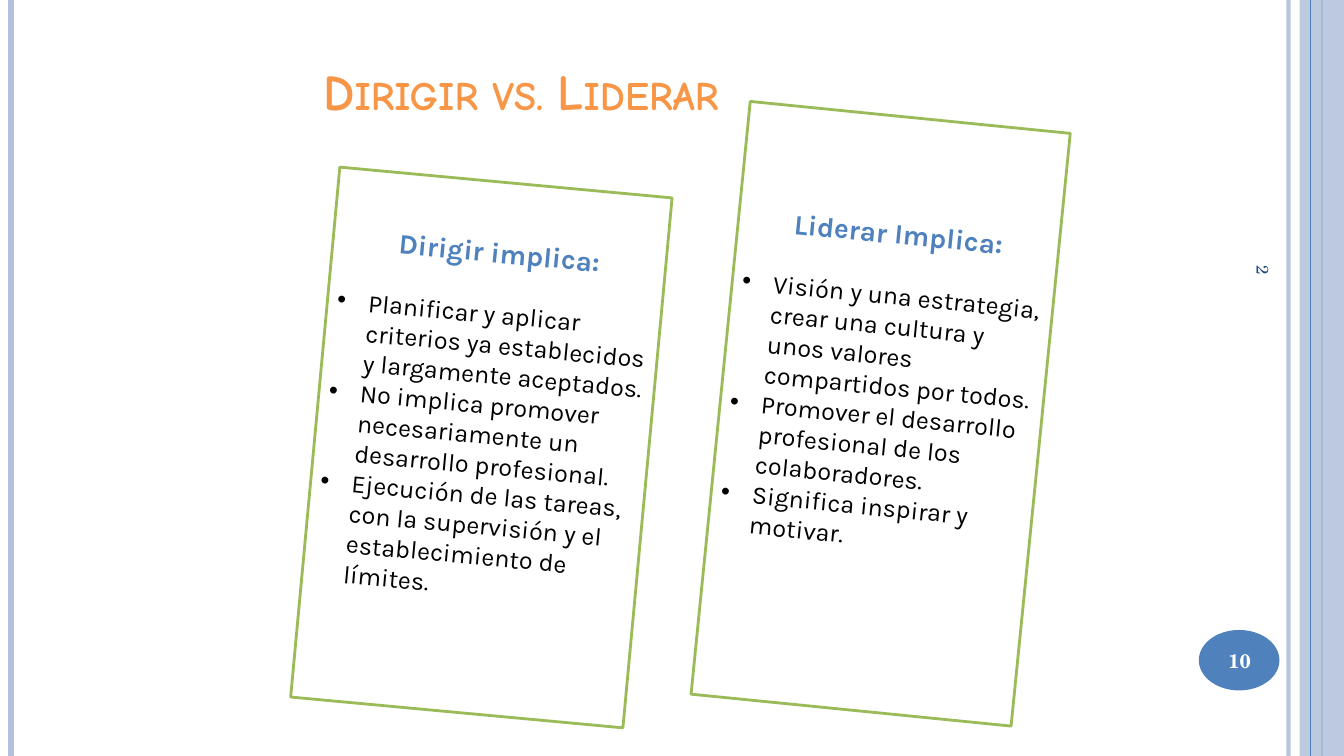
from dataclasses import dataclass

from lxml import etree
from pptx import Presentation
from pptx.dml.color import RGBColor
from pptx.enum.shapes import MSO_CONNECTOR, MSO_SHAPE
from pptx.enum.text import MSO_ANCHOR, PP_ALIGN
from pptx.oxml.ns import qn
from pptx.util import Inches, Pt

STRAIGHT = MSO_CONNECTOR.STRAIGHT
RECT, OVAL = MSO_SHAPE.RECTANGLE, MSO_SHAPE.OVAL
TOP, MIDDLE = MSO_ANCHOR.TOP, MSO_ANCHOR.MIDDLE
LEFT, CENTER = PP_ALIGN.LEFT, PP_ALIGN.CENTER


@dataclass(frozen=True)
class Theme:
    white: str = "FFFFFF"
    black: str = "000000"
    blue: str = "4F81BD"
    pale: str = "B3C1DB"
    navy: str = "1F497D"
    orange: str = "F79646"
    green: str = "9BBB59"
    title_font: str = "Comic Neue"
    body_font: str = "Karla"
    bullet_font: str = "Arial"
    number_font: str = "TeX Gyre Schola"
    title: int = 36
    heading: int = 20
    body: int = 18
    badge: int = 14
    number: int = 12


T = Theme()

RULES = [
    (12.78, T.pale, 3, 93),
    (0.11, T.pale, 4.5, 100),
    (13.11, T.blue, 1.5, 100),
]

CARDS = [
    ((3.12, 1.8, 3.31, 5.28), 5.3, "Dirigir implica:", [
        "Planificar y aplicar criterios ya establecidos y largamente aceptados.",
        "No implica promover necesariamente un desarrollo profesional.",
        "Ejecución de las tareas, con la supervisión y el establecimiento de límites.",
    ]),
    ((7.14, 1.15, 3.19, 5.91), 5.7, "Liderar Implica:", [
        "Visión y una estrategia, crear una cultura y unos valores compartidos por todos.",
        "Promover el desarrollo profesional de los colaboradores.",
        "Significa inspirar y motivar.",
    ]),
]


def inches(box):
    return [Inches(v) for v in box]


def set_alpha(fill, percent):
    if percent < 100:
        color = fill._xPr.find(qn("a:solidFill"))[0]
        etree.SubElement(color, qn("a:alpha"), val=str(percent * 1000))


def format_paragraph(p, text, font, size, color, bold=False, align=LEFT):
    p.add_run().text = text
    p.alignment = align
    p.font.name = font
    p.font.size = Pt(size)
    p.font.bold = bold
    p.font.color.rgb = RGBColor.from_string(color)


def add_rule(slide, x, color, width, alpha=100):
    line = slide.shapes.add_connector(
        STRAIGHT, Inches(x), Inches(0), Inches(x), Inches(7.5))
    line.line.color.rgb = RGBColor.from_string(color)
    line.line.width = Pt(width)
    set_alpha(line.line.fill, alpha)
    etree.SubElement(line._element.spPr, qn("a:effectLst"))


def add_block(slide, kind, box, color, alpha=100):
    sp = slide.shapes.add_shape(kind, *inches(box))
    sp.shadow.inherit = False
    sp.fill.solid()
    sp.fill.fore_color.rgb = RGBColor.from_string(color)
    set_alpha(sp.fill, alpha)
    sp.line.fill.background()
    return sp


def add_label(slide, box, text, size, color, rotation=0, **style):
    sp = slide.shapes.add_textbox(*inches(box))
    sp.rotation = rotation
    tf = sp.text_frame
    tf.word_wrap = True
    tf.vertical_anchor = MIDDLE
    format_paragraph(tf.paragraphs[0], text, T.number_font, size, color, **style)


def add_title(slide, text):
    sp = slide.shapes.title
    sp.left, sp.top, sp.width, sp.height = inches((1.08, 0.6, 8.17, 1.25))
    tf = sp.text_frame
    tf.vertical_anchor = TOP
    tf.margin_top = 0
    p = tf.paragraphs[0]
    format_paragraph(p, text, T.title_font, T.title, T.orange, True, CENTER)
    p.runs[0]._r.get_or_add_rPr().set("cap", "small")


def add_bullet(p):
    pPr = p._p.get_or_add_pPr()
    pPr.set("marL", str(Inches(0.31)))
    pPr.set("indent", str(-Inches(0.31)))
    run_defaults = pPr.find(qn("a:defRPr"))
    run_defaults.addprevious(etree.Element(qn("a:buFont"), typeface=T.bullet_font))
    run_defaults.addprevious(etree.Element(qn("a:buChar"), char="•"))


def add_card(slide, box, rotation, heading, items):
    sp = add_block(slide, RECT, box, T.white)
    sp.rotation = rotation
    sp.line.color.rgb = RGBColor.from_string(T.green)
    sp.line.width = Pt(2)
    tf = sp.text_frame
    tf.word_wrap = True
    tf.vertical_anchor = MIDDLE
    tf.margin_bottom = Inches(0.65)
    p = tf.paragraphs[0]
    format_paragraph(p, heading, T.body_font, T.heading, T.blue, True, CENTER)
    p.space_after = Pt(21.5)
    for item in items:
        p = tf.add_paragraph()
        format_paragraph(p, item, T.body_font, T.body, T.black)
        add_bullet(p)


def main():
    prs = Presentation()
    prs.slide_width, prs.slide_height = Inches(13.33), Inches(7.5)
    slide = prs.slides.add_slide(prs.slide_layouts[5])
    for rule in RULES:
        add_rule(slide, *rule)
    add_block(slide, RECT, (12.89, 0, 0.44, 7.5), T.pale, 87)
    add_rule(slide, 13, T.blue, 0.75)
    add_block(slide, OVAL, (11.89, 6.25, 0.8, 0.6), T.blue)
    add_title(slide, "Dirigir vs. Liderar")
    add_label(slide, (10.78, 4.02, 3.5, 0.53), "2", T.number, T.navy, 90)
    add_label(slide, (11.85, 6.27, 0.89, 0.57), "10", T.badge, T.white,
              bold=True, align=CENTER)
    for card in CARDS:
        add_card(slide, *card)
    prs.save("out.pptx")


if __name__ == "__main__":
    main()
